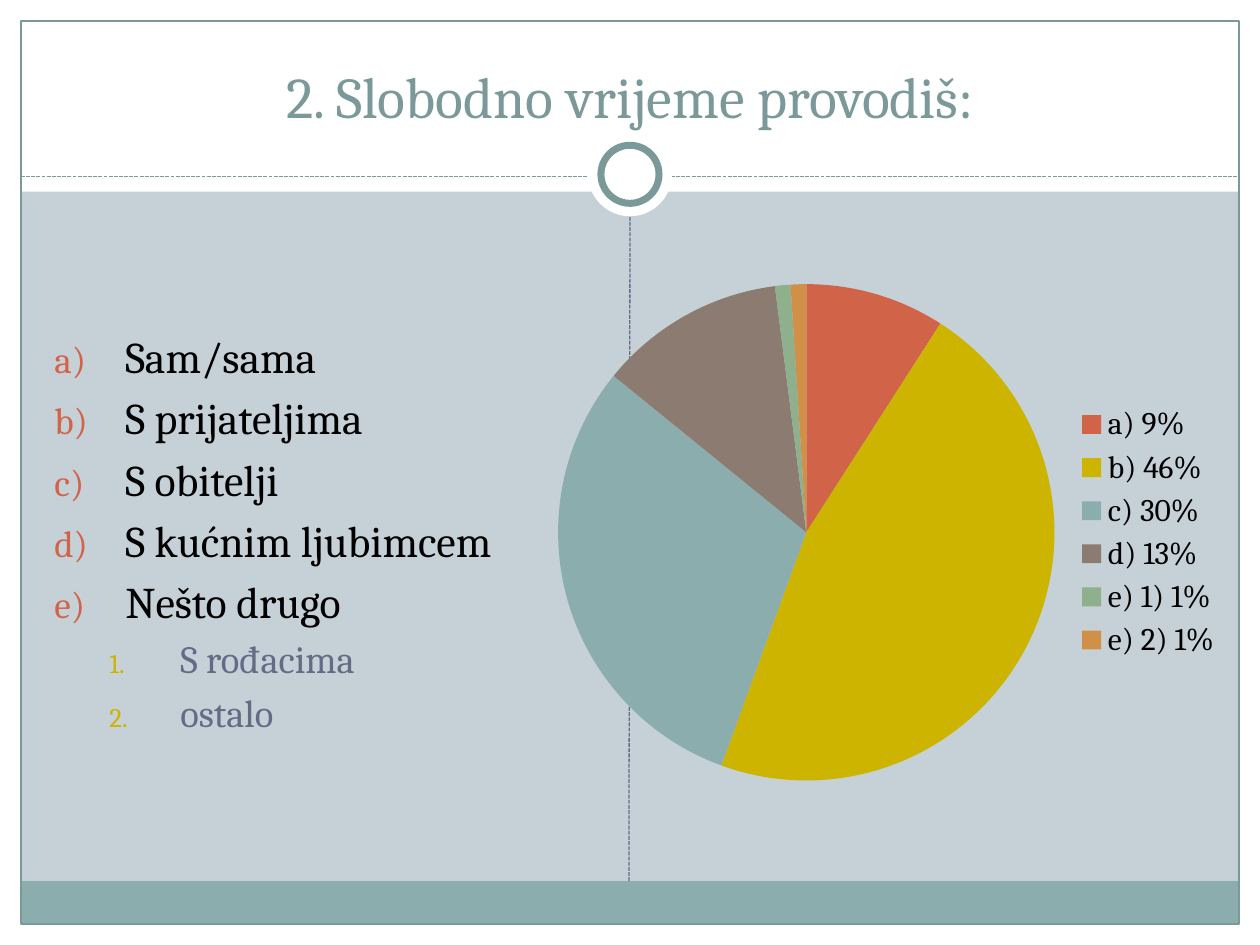
"""Build the survey slide about free time with its answer list and pie chart."""
from dataclasses import dataclass
from typing import Optional

from lxml import etree
from pptx import Presentation
from pptx.chart.data import CategoryChartData
from pptx.dml.color import RGBColor
from pptx.enum.chart import XL_CHART_TYPE, XL_LEGEND_POSITION
from pptx.enum.dml import MSO_LINE
from pptx.enum.shapes import MSO_CONNECTOR, MSO_SHAPE
from pptx.enum.text import MSO_ANCHOR, PP_ALIGN
from pptx.oxml.ns import qn
from pptx.util import Pt

RECTANGLE, ELLIPSE = MSO_SHAPE.RECTANGLE, MSO_SHAPE.OVAL
STRAIGHT, DASH = MSO_CONNECTOR.STRAIGHT, MSO_LINE.SQUARE_DOT
PIE, RIGHT = XL_CHART_TYPE.PIE, XL_LEGEND_POSITION.RIGHT
TOP, BOTTOM, CENTER, LEFT = MSO_ANCHOR.TOP, MSO_ANCHOR.BOTTOM, PP_ALIGN.CENTER, PP_ALIGN.LEFT
FONT = "Cambria"
WIDTH, HEIGHT, MARGIN = 720, 540, 12
TITLE_ONLY = 5
COLORS = {
    "background": "C5D1D7", "white": "FFFFFF", "black": "000000",
    "frame": "7C999A", "slate": "646B86", "red": "D16349", "gold": "CCB400",
    "teal": "8CADAE", "brown": "8C7B70", "green": "8FB08C", "orange": "D19049",
}


@dataclass(frozen=True)
class Panel:
    """A decorative shape."""
    left: float
    top: float
    width: float
    height: float
    fill: Optional[str] = "white"
    line: Optional[str] = None
    weight: float = 0.75
    kind: MSO_SHAPE = RECTANGLE


@dataclass(frozen=True)
class Divider:
    """A dashed straight line."""
    start: tuple[float, float]
    end: tuple[float, float]
    color: str


@dataclass(frozen=True)
class ListLevel:
    """The format of one level of the answer list."""
    size: float
    color: str
    indent: float
    numbering: str
    bullet_color: str
    bullet_size: int


@dataclass(frozen=True)
class Slice:
    """One slice of the pie."""
    label: str
    value: int
    color: str


DECORATION = (
    Panel(0, HEIGHT - MARGIN, WIDTH, MARGIN),
    Panel(0, 0, WIDTH, 109.5),
    Panel(0, 0, MARGIN, HEIGHT),
    Panel(WIDTH - MARGIN, 0, MARGIN, HEIGHT),
    Panel(MARGIN, 503.5, WIDTH - 2 * MARGIN, 24.5, "teal"),
    Panel(MARGIN, MARGIN, WIDTH - 2 * MARGIN, HEIGHT - 2 * MARGIN, None, "frame"),
    Divider((MARGIN, 100.8), (WIDTH - MARGIN, 100.8), "frame"),
    Panel(336, 75.6, 48, 48, kind=ELLIPSE),
    Panel(343.4, 83, 33.2, 33.2, "white", "frame", 4, ELLIPSE),
    Divider((359.4, 503.5), (360, 123.6), "slate"),
)
ANSWER = ListLevel(25, "black", 40.5, "alphaLcParenR", "red", 85)
DETAIL = ListLevel(22, "slate", 72, "arabicPeriod", "gold", 70)
ITEMS = (
    ("Sam/sama", ANSWER), ("S prijateljima", ANSWER), ("S obitelji", ANSWER),
    ("S kućnim ljubimcem", ANSWER), ("Nešto drugo", ANSWER),
    ("S rođacima", DETAIL), ("ostalo", DETAIL),
)
SLICES = (
    Slice("a) 9%", 9, "red"), Slice("b) 46%", 46, "gold"),
    Slice("c) 30%", 30, "teal"), Slice("d) 13%", 12, "brown"),
    Slice("e) 1) 1%", 1, "green"), Slice("e) 2) 1%", 1, "orange"),
)


def rgb(name: str) -> RGBColor:
    """Look up a colour."""
    return RGBColor.from_string(COLORS[name])


def set_values(target, values: dict) -> None:
    """Set each attribute named in the dict."""
    for name, value in values.items():
        setattr(target, name, value)


def format_font(font, size: float, color: str) -> None:
    """Apply the slide font with a size and colour."""
    set_values(font, {"name": FONT, "size": Pt(size), "bold": False})
    font.color.rgb = rgb(color)


def draw_panel(slide, panel: Panel) -> None:
    """Draw a decorative shape."""
    box = (panel.left, panel.top, panel.width, panel.height)
    shape = slide.shapes.add_shape(panel.kind, *map(Pt, box))
    shape.shadow.inherit = False
    if panel.fill:
        shape.fill.solid()
        shape.fill.fore_color.rgb = rgb(panel.fill)
    else:
        shape.fill.background()
    if panel.line:
        shape.line.color.rgb = rgb(panel.line)
        shape.line.width = Pt(panel.weight)
    else:
        shape.line.fill.background()


def draw_divider(slide, divider: Divider) -> None:
    """Draw a dashed line without a shadow."""
    line = slide.shapes.add_connector(STRAIGHT, *map(Pt, divider.start + divider.end))
    line.line.color.rgb = rgb(divider.color)
    set_values(line.line, {"width": Pt(0.75), "dash_style": DASH})
    etree.SubElement(line._element.spPr, qn("a:effectLst"))


def draw_title(slide, text: str) -> None:
    """Place the title in front of the decoration."""
    title = slide.shapes.title
    slide.shapes._spTree.append(title._element)
    set_values(title, {"left": Pt(24), "top": Pt(18), "width": Pt(672), "height": Pt(60)})
    title.text_frame.text = text
    set_values(title.text_frame, {"vertical_anchor": BOTTOM, "word_wrap": True})
    paragraph = title.text_frame.paragraphs[0]
    paragraph.alignment = CENTER
    format_font(paragraph.runs[0].font, 33, "frame")


def number_paragraph(paragraph, level: ListLevel) -> None:
    """Give a paragraph a hanging indent and a coloured automatic number."""
    properties = paragraph._p.get_or_add_pPr()
    properties.set("marL", str(Pt(level.indent)))
    properties.set("indent", str(-Pt(ANSWER.indent)))
    color = etree.SubElement(properties, qn("a:buClr"))
    etree.SubElement(color, qn("a:srgbClr"), val=COLORS[level.bullet_color])
    etree.SubElement(properties, qn("a:buSzPct"), val=str(level.bullet_size * 1000))
    etree.SubElement(properties, qn("a:buFont"), typeface=FONT)
    etree.SubElement(properties, qn("a:buAutoNum"), type=level.numbering)


def draw_list(slide) -> None:
    """Draw the numbered answers."""
    frame = slide.shapes.add_textbox(Pt(24), Pt(185), Pt(318), Pt(291.6)).text_frame
    set_values(frame, {"word_wrap": True, "vertical_anchor": TOP})
    for index, (text, level) in enumerate(ITEMS):
        paragraph = frame.add_paragraph() if index else frame.paragraphs[0]
        set_values(paragraph, {
            "alignment": LEFT, "level": int(level is DETAIL),
            "space_before": Pt(level.size * 0.2),
        })
        number_paragraph(paragraph, level)
        run = paragraph.add_run()
        run.text = text
        format_font(run.font, level.size, level.color)


def draw_chart(slide) -> None:
    """Draw the pie of answers with its legend."""
    data = CategoryChartData()
    data.categories = [item.label for item in SLICES]
    data.add_series("Series 1", [item.value for item in SLICES])
    box = map(Pt, (309, 126, 396.7, 356.4))
    chart = slide.shapes.add_chart(PIE, *box, data).chart
    set_values(chart, {"has_title": False, "has_legend": True})
    set_values(chart.legend, {"position": RIGHT, "include_in_layout": False})
    format_font(chart.font, 18, "black")
    plot = chart.plots[0]
    plot.vary_by_categories = True
    for index, item in enumerate(SLICES):
        fill = plot.series[0].points[index].format.fill
        fill.solid()
        fill.fore_color.rgb = rgb(item.color)


def main() -> None:
    """Build and save the presentation."""
    presentation = Presentation()
    set_values(presentation, {"slide_width": Pt(WIDTH), "slide_height": Pt(HEIGHT)})
    slide = presentation.slides.add_slide(presentation.slide_layouts[TITLE_ONLY])
    slide.background.fill.solid()
    slide.background.fill.fore_color.rgb = rgb("background")
    for item in DECORATION:
        (draw_panel if isinstance(item, Panel) else draw_divider)(slide, item)
    draw_title(slide, "2. Slobodno vrijeme provodiš:")
    draw_list(slide)
    draw_chart(slide)
    presentation.save("out.pptx")


if __name__ == "__main__":
    main()
